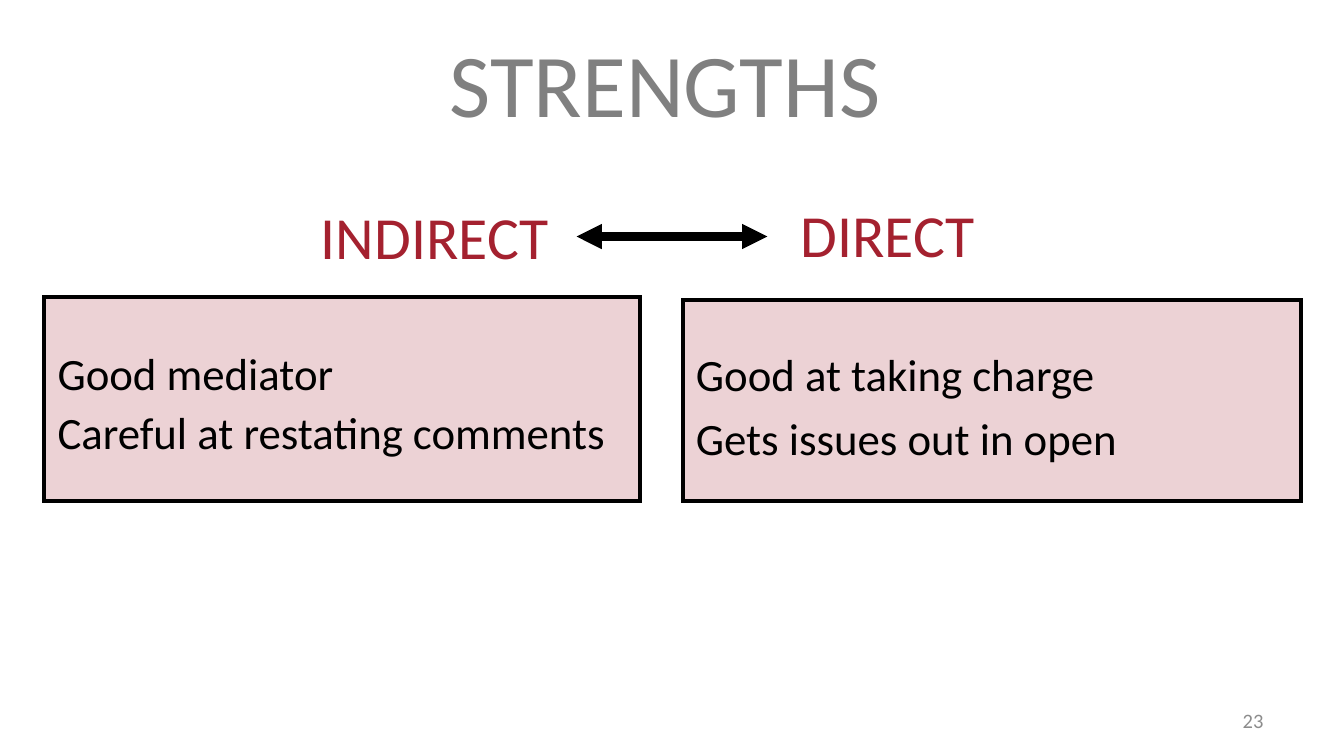
from dataclasses import dataclass

from lxml import etree
from pptx import Presentation
from pptx.dml.color import RGBColor as RGB
from pptx.enum.shapes import MSO_CONNECTOR as Conn, MSO_SHAPE as Shape
from pptx.enum.text import MSO_ANCHOR as Anchor, PP_ALIGN as Align
from pptx.oxml.ns import qn
from pptx.util import Inches, Pt


@dataclass(frozen=True)
class Theme:
    font: str = "Calibri"
    red: RGB = RGB(0xA4, 0x21, 0x2F)
    black: RGB = RGB(0, 0, 0)
    gray: RGB = RGB(0x80, 0x80, 0x80)
    pale: RGB = RGB(0x8C, 0x8C, 0x8C)
    title: int = 48
    head: int = 32
    body: int = 24
    note: int = 11
    tint: int = 20  # percent opacity of the panels


THEME = Theme()


def write(shape, text, size, color, align=Align.LEFT, anchor=Anchor.TOP,
          wrap=True, space=1.0):
    """Fill a shape with one paragraph per line of text."""
    frame = shape.text_frame
    frame.word_wrap = wrap
    frame.vertical_anchor = anchor
    frame.text = text
    for para in frame.paragraphs:
        para.alignment = align
        para.line_spacing = space
        para.font.name = THEME.font
        para.font.size = Pt(size)
        para.font.color.rgb = color


def label(slide, box, text, size, color, **form):
    area = slide.shapes.add_textbox(*map(Inches, box))
    write(area, text, size, color, **form)


def panel(slide, box, text, space):
    """Tinted, outlined box with a list of strengths."""
    rect = slide.shapes.add_shape(Shape.RECTANGLE, *map(Inches, box))
    rect.shadow.inherit = False
    rect.fill.solid()
    rect.fill.fore_color.rgb = THEME.red
    tone = next(rect.fill._xPr.iter(qn("a:srgbClr")))
    etree.SubElement(tone, qn("a:alpha"), val=str(THEME.tint * 1000))
    rect.line.color.rgb = THEME.black
    rect.line.width = Pt(2.25)
    # Square corners
    etree.SubElement(rect.line._get_or_add_ln(), qn("a:miter"), lim="800000")
    write(rect, text, THEME.body, THEME.black, anchor=Anchor.MIDDLE,
          wrap=False, space=space)


def scale(slide, box):
    """Two opposite styles joined by a double-headed arrow."""
    x, y, w, h = box
    label(slide, (x, y + 0.02, 2.84, h), "INDIRECT", THEME.head, THEME.red,
          align=Align.RIGHT)
    label(slide, (x + w - 2.08, y, 2.08, h), "DIRECT", THEME.head, THEME.red)

    mid = Inches(y + 0.34)
    arrow = slide.shapes.add_connector(
        Conn.STRAIGHT, Inches(x + 2.95), mid, Inches(x + 4.37), mid)
    arrow.line.color.rgb = THEME.black
    arrow.line.width = Pt(4.5)
    line = arrow.line._get_or_add_ln()
    for end in ("a:headEnd", "a:tailEnd"):
        etree.SubElement(line, qn(end), type="triangle")
    etree.SubElement(arrow._element.spPr, qn("a:effectLst"))


def build():
    deck = Presentation()
    deck.slide_width = Inches(10)
    deck.slide_height = deck.slide_width * 9 // 16
    slide = deck.slides.add_slide(deck.slide_layouts[6])

    # Lists of strengths
    panel(slide, (0.33, 2.21, 4.43, 1.52),
          "Good mediator\nCareful at restating comments", 1.1)
    panel(slide, (5.08, 2.23, 4.6, 1.5),
          "Good at taking charge\nGets issues out in open", 1.2)

    # Headings above the lists
    scale(slide, (1.34, 1.42, 6.6, 0.64))

    # Title and page number
    label(slide, (3.22, 0.16, 3.46, 0.91), "STRENGTHS", THEME.title,
          THEME.gray, align=Align.CENTER)
    label(slide, (7.17, 5.21, 2.33, 0.3), "23", THEME.note, THEME.pale,
          align=Align.RIGHT, anchor=Anchor.MIDDLE)

    deck.save("out.pptx")


if __name__ == "__main__":
    build()
